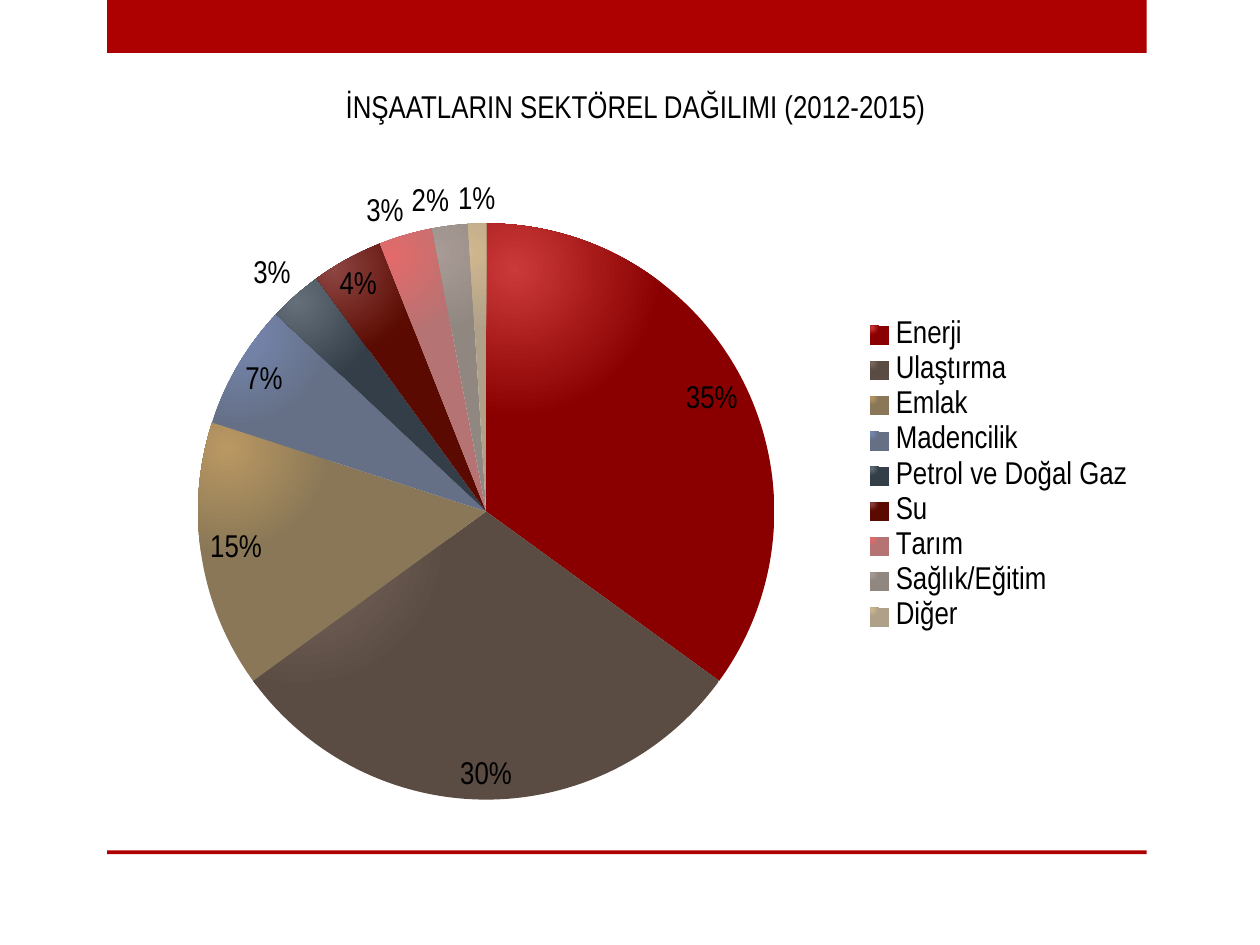
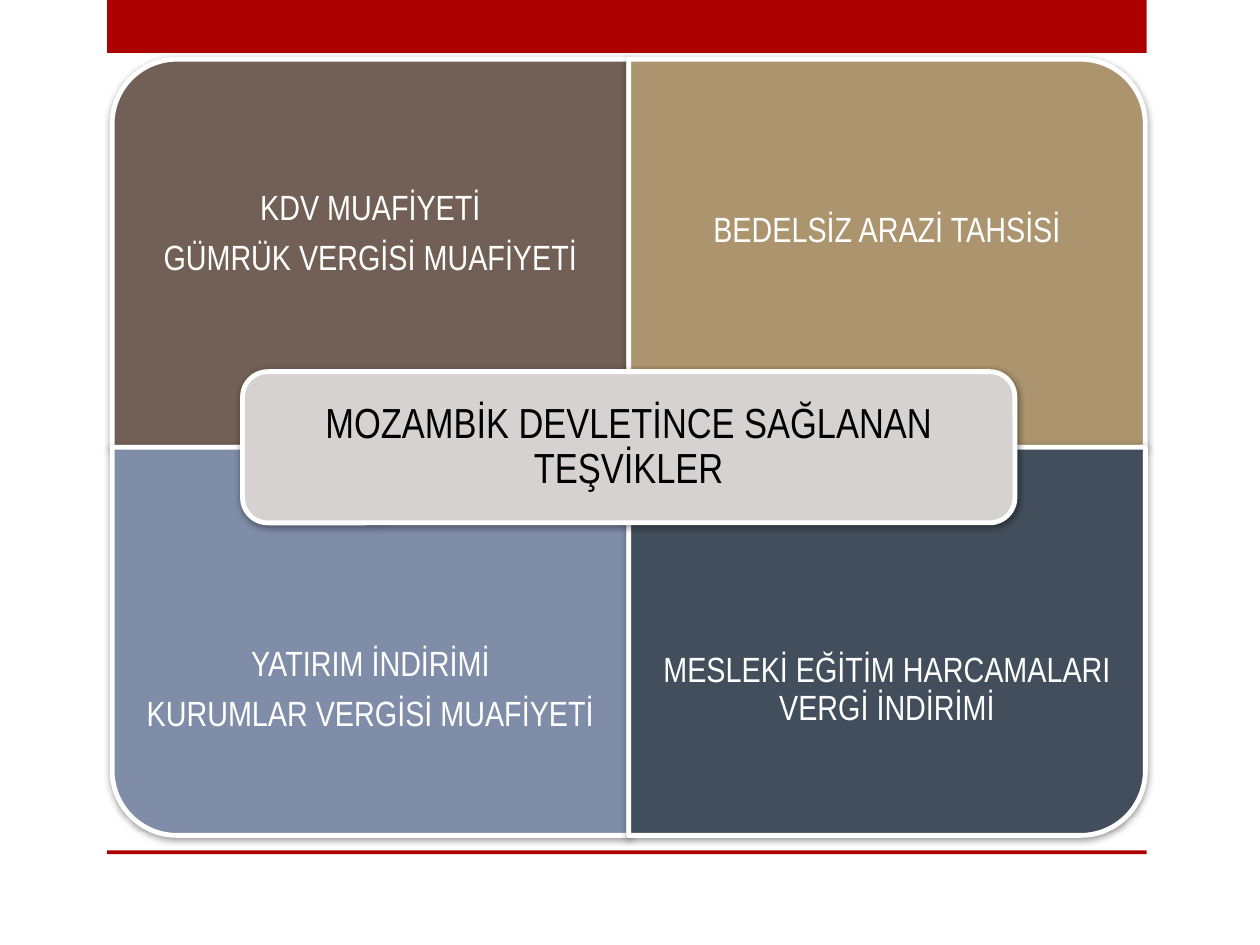
from dataclasses import dataclass

from lxml import etree
from pptx import Presentation
from pptx.chart.data import CategoryChartData
from pptx.dml.color import RGBColor
from pptx.enum.chart import XL_CHART_TYPE as ChartType
from pptx.enum.chart import XL_LABEL_POSITION as LabelPosition
from pptx.enum.chart import XL_LEGEND_POSITION as LegendPosition
from pptx.enum.shapes import MSO_SHAPE as Shape
from pptx.enum.text import MSO_ANCHOR as Anchor
from pptx.enum.text import MSO_AUTO_SIZE as AutoSize
from pptx.enum.text import PP_ALIGN as Align
from pptx.oxml import parse_xml
from pptx.oxml.ns import nsdecls, qn
from pptx.util import Inches, Pt

FONT = "Arial Narrow"
TITLE_ONLY = 5

RED = RGBColor(0xAD, 0x01, 0x01)
BROWN = RGBColor(0x72, 0x60, 0x56)
SAND = RGBColor(0xAC, 0x95, 0x6E)
BLUE = RGBColor(0x80, 0x8D, 0xA9)
SLATE = RGBColor(0x42, 0x4E, 0x5B)
PALE_GREY = RGBColor(0xD5, 0xD2, 0xD1)
WHITE = RGBColor(0xFF, 0xFF, 0xFF)
BLACK = RGBColor(0x00, 0x00, 0x00)

# Sector, share, then the light and dark ends of the slice's shading
SECTORS = [
    ("Enerji", 0.35, RGBColor(0xCB, 0x3A, 0x3A), RGBColor(0x8A, 0x00, 0x00)),
    ("Ulaştırma", 0.30, RGBColor(0x7C, 0x6A, 0x61), RGBColor(0x5A, 0x4B, 0x43)),
    ("Emlak", 0.15, RGBColor(0xBA, 0x98, 0x62), RGBColor(0x89, 0x77, 0x57)),
    ("Madencilik", 0.07, RGBColor(0x76, 0x87, 0xB0), RGBColor(0x65, 0x70, 0x87)),
    ("Petrol ve Doğal Gaz", 0.03, RGBColor(0x65, 0x6F, 0x79), RGBColor(0x34, 0x3E, 0x49)),
    ("Su", 0.04, RGBColor(0x8D, 0x45, 0x42), RGBColor(0x5A, 0x0A, 0x00)),
    ("Tarım", 0.03, RGBColor(0xE4, 0x6A, 0x6A), RGBColor(0xB5, 0x73, 0x73)),
    ("Sağlık/Eğitim", 0.02, RGBColor(0xA8, 0x9B, 0x95), RGBColor(0x91, 0x87, 0x81)),
    ("Diğer", 0.01, RGBColor(0xD0, 0xB7, 0x8E), RGBColor(0xAF, 0xA0, 0x8A)),
]

# Lines, fill, rotation, text offset (percent of the text area) by reading order
INCENTIVES = [
    (["KDV MUAFİYETİ", "GÜMRÜK VERGİSİ MUAFİYETİ"], BROWN, 270, 10),
    (["BEDELSİZ ARAZİ TAHSİSİ"], SAND, 0, 9),
    (["YATIRIM İNDİRİMİ", "KURUMLAR VERGİSİ MUAFİYETİ"], BLUE, 180, 0),
    (["MESLEKİ EĞİTİM HARCAMALARI VERGİ İNDİRİMİ"], SLATE, 90, 0),
]


@dataclass
class Box:
    left: float
    top: float
    width: float
    height: float

    def inner(self, left, top, width, height):
        """Return an inner box given in percent of this one."""
        return Box(self.left + self.width * left / 100, self.top + self.height * top / 100,
                   self.width * width / 100, self.height * height / 100)

    def turned(self):
        """Swap width and height around the same centre."""
        shift = (self.width - self.height) / 2
        return Box(self.left + shift, self.top - shift, self.height, self.width)

    def at(self):
        return [int(length) for length in (self.left, self.top, self.width, self.height)]


def add_filled(page, kind, box, color):
    shape = page.shapes.add_shape(kind, *box.at())
    shape.shadow.inherit = False
    shape.fill.solid()
    shape.fill.fore_color.rgb = color
    shape.line.fill.background()
    return shape


def add_tile(page, kind, box, color):
    """Filled shape with a white outline and a soft shadow."""
    tile = add_filled(page, kind, box, color)
    tile.line.color.rgb = WHITE
    tile.line.width = Pt(2.75)
    effects = tile.element.spPr.find(qn("a:effectLst"))
    shadow = etree.SubElement(effects, qn("a:outerShdw"), blurRad=str(Pt(4)),
                              dist=str(Pt(1)), dir=str(88 * 60000), rotWithShape="0")
    color_node = etree.SubElement(shadow, qn("a:srgbClr"), val=str(BLACK))
    etree.SubElement(color_node, qn("a:alpha"), val="40000")
    return tile


def write(shape, lines, size, color, inset, wrap=True):
    frame = shape.text_frame
    frame.text = "\n".join(lines)
    frame.auto_size = AutoSize.NONE
    frame.word_wrap = wrap
    frame.vertical_anchor = Anchor.MIDDLE
    frame.margin_left = frame.margin_right = Inches(inset)
    frame.margin_top = frame.margin_bottom = Inches(inset)
    for para in frame.paragraphs:
        para.alignment = Align.CENTER
        para.line_spacing = 0.9
        para.space_before = Pt(0)
        para.space_after = Pt(size * 0.35)
        for span in para.runs:
            span.font.name = FONT
            span.font.size = Pt(size)
            span.font.color.rgb = color


def place_title(page, box, text, size, inset, wrap=True):
    title = page.shapes.title
    title.left, title.top, title.width, title.height = box.at()
    write(title, [text], size, BLACK, inset, wrap)
    return title


def new_page(deck, canvas):
    """Title-only page with the red top band and bottom rule."""
    page = deck.slides.add_slide(deck.slide_layouts[TITLE_ONLY])
    for top, height in ((0, 5.6), (90, 0.4)):
        add_filled(page, Shape.RECTANGLE, canvas.inner(8.5, top, 82.5, height), RED)
    return page


def shade_slice(point, light, dark):
    """Radial shading from the upper left of the slice."""
    point.format.fill.background()
    properties = point.format.fill._xPr
    properties.remove(properties.find(qn("a:noFill")))
    stops = "".join(f'<a:gs pos="{pos}000"><a:srgbClr val="{color}"/></a:gs>'
                    for pos, color in ((0, light), (55, dark), (100, dark)))
    properties.insert(0, parse_xml(
        f'<a:gradFill {nsdecls("a")} rotWithShape="1"><a:gsLst>{stops}</a:gsLst>'
        '<a:path path="circle"><a:fillToRect l="10000" t="10000" r="90000" b="90000"/>'
        '</a:path></a:gradFill>'))
    point.format.line.fill.background()


def set_plot_area(chart, **shares):
    """Fix the inner plot area in shares of the chart."""
    area = chart._chartSpace.chart.plotArea
    for old in area.findall(qn("c:layout")):
        area.remove(old)
    layout = etree.Element(qn("c:layout"))
    manual = etree.SubElement(layout, qn("c:manualLayout"))
    settings = {"layoutTarget": "inner", "xMode": "edge", "yMode": "edge", **shares}
    for name, value in settings.items():
        etree.SubElement(manual, qn(f"c:{name}"), val=str(value))
    area.insert(0, layout)


def add_sector_pie(page, box):
    data = CategoryChartData(number_format="0%")
    data.categories = [sector[0] for sector in SECTORS]
    data.add_series("Series 1", [sector[1] for sector in SECTORS])
    chart = page.shapes.add_chart(ChartType.PIE, *box.at(), data).chart
    chart.has_title = False
    chart.font.name = FONT
    chart.font.size = Pt(18)
    chart.font.color.rgb = BLACK
    set_plot_area(chart, x=0.11, y=0.1, w=0.54, h=0.9)

    # Legend
    chart.has_legend = True
    chart.legend.position = LegendPosition.RIGHT
    chart.legend.include_in_layout = False

    # Slices and labels
    plot = chart.plots[0]
    plot.vary_by_categories = True
    plot.has_data_labels = True
    labels = plot.data_labels
    labels.show_value = True
    labels.show_percentage = False
    labels.number_format = "0%"
    labels.number_format_is_linked = False
    labels.position = LabelPosition.BEST_FIT
    for index, (_, _, light, dark) in enumerate(SECTORS):
        shade_slice(plot.series[0].points[index], light, dark)


def build_sector_page(deck, canvas):
    page = new_page(deck, canvas)
    add_sector_pie(page, canvas.inner(6.4, 13.07, 84.7, 74.67))
    place_title(page, canvas.inner(26.2, 8.8, 48.5, 5.33),
                "İNŞAATLARIN SEKTÖREL DAĞILIMI (2012-2015)", 18, 0.05, wrap=False)


def add_quadrants(page, box):
    """Two by two tiles, each rounded at its outer corner."""
    for index, (lines, color, rotation, drop) in enumerate(INCENTIVES):
        row, column = divmod(index, 2)
        cell = box.inner(50 * column, 50 * row, 50, 50)
        sideways = rotation % 180 == 90
        tile = add_tile(page, Shape.ROUND_1_RECTANGLE,
                        cell.turned() if sideways else cell, color)
        tile.rotation = rotation
        # Text keeps to the outer three quarters of the tile
        area = cell.inner(0, 25 * row, 100, 75).inner(0, drop, 100, 100)
        write(page.shapes.add_textbox(*area.at()), lines, 20, WHITE, 0.16)


def build_incentive_page(deck, canvas):
    page = new_page(deck, canvas)
    matrix = canvas.inner(8.9, 6.27, 82, 82.13)
    add_quadrants(page, matrix)
    # Central title plate
    hub = matrix.inner(12.62, 40.26, 74.76, 19.48)
    add_tile(page, Shape.ROUNDED_RECTANGLE, hub, PALE_GREY)
    title = place_title(page, hub, "MOZAMBİK DEVLETİNCE SAĞLANAN TEŞVİKLER", 24, 0.15)
    page.shapes.element.append(title.element)


def main():
    deck = Presentation()
    deck.slide_width, deck.slide_height = Inches(10), Inches(7.5)
    canvas = Box(0, 0, deck.slide_width, deck.slide_height)
    build_sector_page(deck, canvas)
    build_incentive_page(deck, canvas)
    deck.save("out.pptx")


if __name__ == "__main__":
    main()
